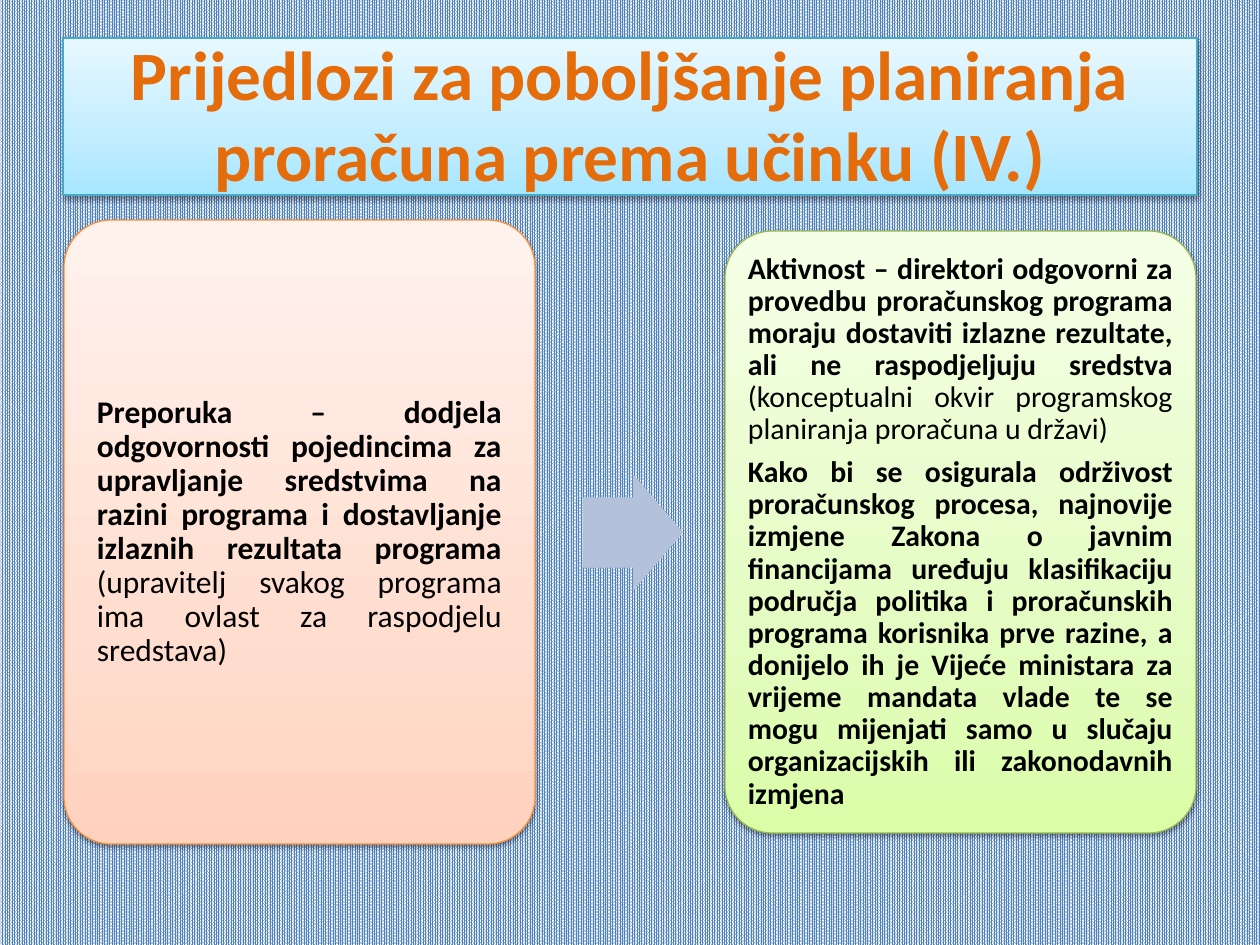
import pptx
import pptx.util
import pptx.dml.color
import pptx.enum.dml
import pptx.enum.shapes
import pptx.enum.text
import pptx.oxml.ns
import lxml.etree

RGB = pptx.dml.color.RGBColor
Pt = pptx.util.Pt
SHAPE = pptx.enum.shapes.MSO_SHAPE
ALIGN = pptx.enum.text.PP_ALIGN
MID = pptx.enum.text.MSO_ANCHOR.MIDDLE

WHITE = RGB(0xFF, 0xFF, 0xFF)
BLACK = RGB(0x00, 0x00, 0x00)
BLUE = RGB(0x4F, 0x81, 0xBD)
RUST = RGB(0xE4, 0x6C, 0x0A)
STEEL = RGB(0xB3, 0xC1, 0xDB)
TEAL = RGB(0x46, 0xAA, 0xC5)
AMBER = RGB(0xF6, 0x92, 0x40)
OLIVE = RGB(0x98, 0xB9, 0x55)
SKIES = (RGB(0xA7, 0xE6, 0xFF), RGB(0xC1, 0xED, 0xFF), RGB(0xE7, 0xF8, 0xFF))
PEACH = (RGB(0xFF, 0xD2, 0xBD), RGB(0xFF, 0xDE, 0xD0), RGB(0xFF, 0xF2, 0xED))
LIMES = (RGB(0xDA, 0xFD, 0xA7), RGB(0xE4, 0xFC, 0xC2), RGB(0xF5, 0xFF, 0xE7))
STOPS = (0, 35, 100)
FONT = "Calibri"

TITLE = "Prijedlozi za poboljšanje planiranja proračuna prema učinku (IV.)"
ADVICE = [
    ("Preporuka – dodjela odgovornosti pojedincima za upravljanje sredstvima na "
     "razini programa i dostavljanje izlaznih rezultata programa ",
     "(upravitelj svakog programa ima ovlast za raspodjelu sredstava)"),
]
ACTION = [
    ("Aktivnost – direktori odgovorni za provedbu proračunskog programa moraju "
     "dostaviti izlazne rezultate, ali ne raspodjeljuju sredstva ",
     "(konceptualni okvir programskog planiranja proračuna u državi)"),
    ("Kako bi se osigurala održivost proračunskog procesa, najnovije izmjene "
     "Zakona o javnim financijama uređuju klasifikaciju područja politika i "
     "proračunskih programa korisnika prve razine, a donijelo ih je Vijeće "
     "ministara za vrijeme mandata vlade te se mogu mijenjati samo u slučaju "
     "organizacijskih ili zakonodavnih izmjena", ""),
]


def px(num):
    """Turn whole pixels into EMU."""
    return pptx.util.Emu(round(num * 914400 / 126))


def node(root, tag, **attrs):
    """Append a DrawingML element to its parent."""
    return lxml.etree.SubElement(root, pptx.oxml.ns.qn(tag), attrs)


def panel(slide, kind, box, tones, edge):
    """Add a shaded panel with a thin edge and a soft shadow."""
    shape = slide.shapes.add_shape(kind, *map(px, box))
    shape.fill.gradient()
    props = shape.fill._xPr
    grad = props.find(pptx.oxml.ns.qn("a:gradFill"))
    for part in list(grad):
        grad.remove(part)
    stops = node(grad, "a:gsLst")
    for place, tone in zip(STOPS, tones):
        stop = node(stops, "a:gs", pos=str(place * 1000))
        node(stop, "a:srgbClr", val=str(tone))
    node(grad, "a:lin", ang="16200000", scaled="0")
    shape.line.color.rgb = edge
    shape.line.width = Pt(0.75)
    shape.shadow.inherit = False
    glow = props.find(pptx.oxml.ns.qn("a:effectLst"))
    shade = node(glow, "a:outerShdw", blurRad=str(Pt(3.1)), dist=str(Pt(1.6)),
                 dir="5400000", rotWithShape="0")
    tint = node(shade, "a:srgbClr", val=str(BLACK))
    node(tint, "a:alpha", val="38000")
    return shape


def style(para, size, tone, align, space):
    """Set the font and layout of a paragraph."""
    para.font.name = FONT
    para.font.size = Pt(size)
    para.font.color.rgb = tone
    para.alignment = align
    para.line_spacing = space


def head(slide, box):
    """Add the title banner."""
    frame = panel(slide, SHAPE.RECTANGLE, box, SKIES, TEAL).text_frame
    frame.word_wrap = True
    frame.vertical_anchor = MID
    para = frame.paragraphs[0]
    para.text = TITLE
    style(para, 39.6, RUST, ALIGN.CENTER, 0.97)
    para.font.bold = True


def card(slide, box, tones, edge, paras, size, inset):
    """Add a rounded card with its justified text."""
    panel(slide, SHAPE.ROUNDED_RECTANGLE, box, tones, edge).adjustments[0] = 0.1
    left, top, width, height = box
    pad = 14
    inner = (left + pad, top + pad, width - 2 * pad, height - 2 * pad)
    frame = slide.shapes.add_textbox(*map(px, inner)).text_frame
    frame.word_wrap = True
    frame.vertical_anchor = MID
    frame.margin_left = frame.margin_right = px(inset)
    frame.margin_top = frame.margin_bottom = px(inset)
    for index, (strong, plain) in enumerate(paras):
        para = frame.add_paragraph() if index else frame.paragraphs[0]
        style(para, size, BLACK, ALIGN.JUSTIFY, 0.9)
        para.space_after = Pt(6)
        for words, bold in ((strong, True), (plain, False)):
            if words:
                run = para.add_run()
                run.text = words
                run.font.bold = bold


def arrow(slide, box):
    """Add the arrow between the cards."""
    shape = slide.shapes.add_shape(SHAPE.RIGHT_ARROW, *map(px, box))
    shape.adjustments[0] = 0.6
    shape.adjustments[1] = 0.5
    shape.fill.solid()
    shape.fill.fore_color.rgb = STEEL
    shape.line.fill.background()
    shape.shadow.inherit = False


def main():
    """Build and save the slide."""
    deck = pptx.Presentation()
    deck.slide_width, deck.slide_height = px(1260), px(945)
    slide = deck.slides.add_slide(deck.slide_layouts[6])
    back = slide.background.fill
    back.patterned()
    back.pattern = pptx.enum.dml.MSO_PATTERN.PERCENT_90
    back.fore_color.rgb = BLUE
    back.back_color.rgb = WHITE
    head(slide, (63, 38, 1134, 157))
    card(slide, (64, 220, 471, 624), PEACH, AMBER, ADVICE, 18, 19)
    arrow(slide, (583, 474, 100, 117))
    card(slide, (725, 231, 471, 602), LIMES, OLIVE, ACTION, 17, 9)
    deck.save("out.pptx")


if __name__ == "__main__":
    main()
